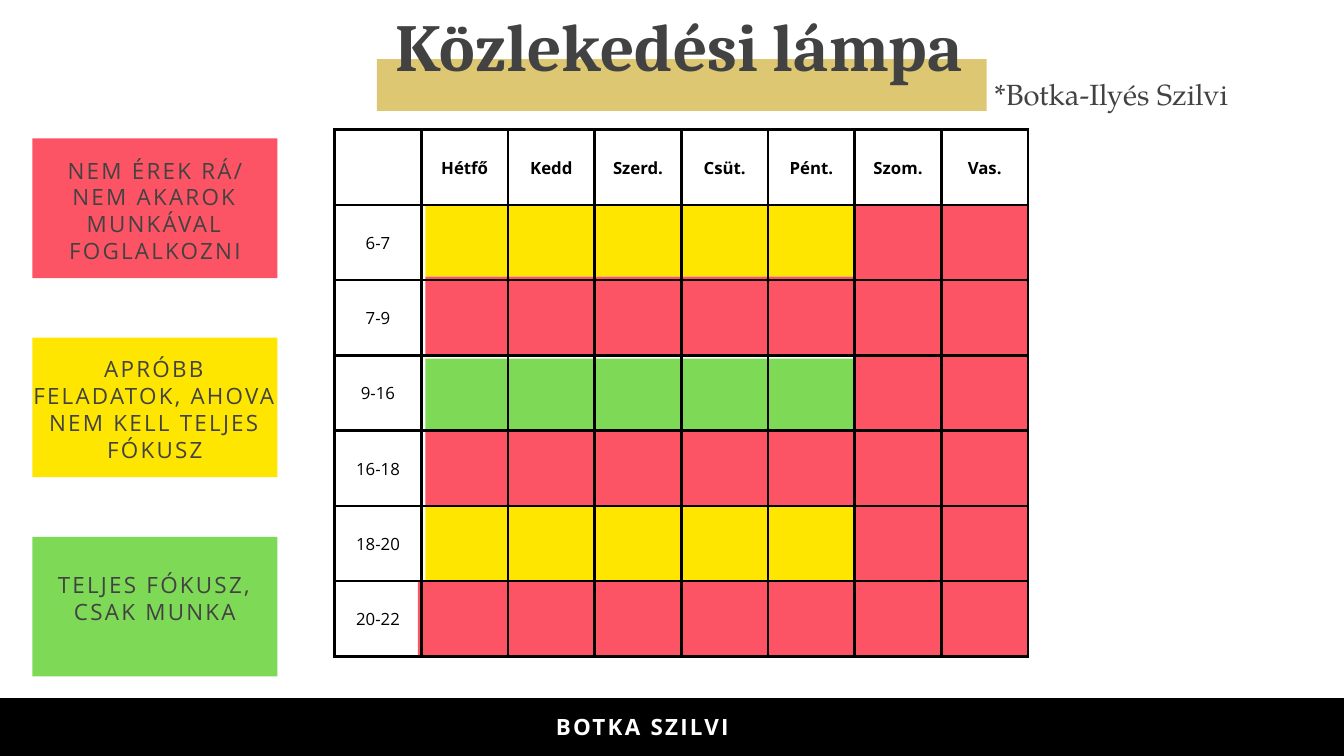
"""Build a weekly traffic-light planner slide."""
from lxml import etree
from pptx import Presentation
from pptx.dml.color import RGBColor
from pptx.enum.shapes import MSO_SHAPE
from pptx.enum.text import MSO_ANCHOR, PP_ALIGN
from pptx.oxml.ns import qn
from pptx.util import Cm, Pt

RECT = MSO_SHAPE.RECTANGLE
TOP, MIDDLE = MSO_ANCHOR.TOP, MSO_ANCHOR.MIDDLE
LEFT, CENTER = PP_ALIGN.LEFT, PP_ALIGN.CENTER

RED, YELLOW, GREEN = "FC5464", "FFE600", "7ED957"
GOLD, GRAY, BLACK, WHITE = "DEC772", "424242", "000000", "FFFFFF"
DAYS = ["Hétfő", "Kedd", "Szerd.", "Csüt.", "Pént.", "Szom.", "Vas."]
HOURS = ["6-7", "7-9", "9-16", "16-18", "18-20", "20-22"]
LEGEND = [
    (RED, "NEM ÉREK RÁ/\nNEM AKAROK MUNKÁVAL FOGLALKOZNI", 0.69),
    (YELLOW, "APRÓBB FELADATOK, AHOVA NEM KELL TELJES FÓKUSZ", 0.67),
    (GREEN, "TELJES FÓKUSZ, CSAK MUNKA", 1.3),
]
WEEKDAY_BANDS = [
    (YELLOW, 7.77, 2.69),
    (RED, 10.46, 2.93),
    (GREEN, 13.56, 2.7),
    (RED, 16.26, 2.84),
    (YELLOW, 19.1, 2.87),
]


def rgb(value):
    return RGBColor.from_string(value)


class Deck:
    def __init__(self, slide):
        self.s = slide
        self.font = "Open Sans"

    def fill_text(self, tf, text, size, color=GRAY, font=None, bold=False,
                  align=CENTER, leading=28.8, spacing=0, top=0):
        tf.text = text
        tf.word_wrap = True
        tf.vertical_anchor = TOP
        tf.margin_left = tf.margin_right = tf.margin_bottom = 0
        tf.margin_top = Cm(top)
        for p in tf.paragraphs:
            self.style(p, size, color, font, bold, align, leading)
            if spacing:
                props = p._p.get_or_add_pPr().get_or_add_defRPr()
                props.set("spc", str(round(spacing * 100)))

    def style(self, p, size, color, font, bold, align, leading):
        p.alignment = align
        p.line_spacing = Pt(leading)
        p.space_before = Pt(0)
        p.font.size = Pt(size)
        p.font.name = font or self.font
        p.font.bold = bold
        p.font.color.rgb = rgb(color)

    def title(self, x, y, w, h, text, **style):
        sp = self.s.shapes.title
        sp.left, sp.top, sp.width, sp.height = Cm(x), Cm(y), Cm(w), Cm(h)
        self.fill_text(sp.text_frame, text, **style)
        sp.element.getparent().append(sp.element)

    def text(self, x, y, w, h, text, **style):
        sp = self.s.shapes.add_textbox(Cm(x), Cm(y), Cm(w), Cm(h))
        self.fill_text(sp.text_frame, text, **style)

    def box(self, x, y, w, h, color):
        sp = self.s.shapes.add_shape(RECT, Cm(x), Cm(y), Cm(w), Cm(h))
        sp.shadow.inherit = False
        sp.fill.solid()
        sp.fill.fore_color.rgb = rgb(color)
        sp.line.fill.background()
        return sp

    def border(self, cell):
        props = cell._tc.get_or_add_tcPr()
        for side in ("lnL", "lnR", "lnT", "lnB"):
            ln = etree.SubElement(props, qn("a:" + side), w=str(Pt(3)))
            fill = etree.SubElement(ln, qn("a:solidFill"))
            etree.SubElement(fill, qn("a:srgbClr"), val=BLACK)

    def table(self, x, y, w, h, rows):
        frame = self.s.shapes.add_table(len(rows), len(rows[0]),
                                        Cm(x), Cm(y), Cm(w), Cm(h))
        table = frame.table
        table.first_row = table.horz_banding = False
        for i, row in enumerate(rows):
            for j, text in enumerate(row):
                cell = table.cell(i, j)
                self.border(cell)
                cell.fill.background()
                cell.vertical_anchor = MIDDLE
                cell.margin_left = cell.margin_right = Cm(0.53)
                cell.margin_top = cell.margin_bottom = Cm(0.53)
                cell.text = text
                self.style(cell.text_frame.paragraphs[0], 18, BLACK, None,
                           i == 0, CENTER, 25.2)


def main():
    prs = Presentation()
    prs.slide_width, prs.slide_height = Cm(50.8), Cm(28.575)
    deck = Deck(prs.slides.add_slide(prs.slide_layouts[5]))

    deck.box(0, 26.39, 50.8, 2.19, BLACK)
    deck.box(14.25, 2.24, 23.04, 1.95, GOLD)
    deck.text(17.04, 26.95, 14.48, 0.99, "BOTKA SZILVI", size=24,
              color=WHITE, bold=True, spacing=2.4)
    deck.title(0.71, 0.66, 49.91, 2.67, "Közlekedési lámpa", size=72,
               font="Cambria", bold=True, leading=72)
    deck.text(37.59, 2.67, 10.8, 1.5, "*Botka-Ilyés Szilvi", size=31.3,
              font="TeX Gyre Pagella", align=LEFT, leading=43.8)

    for i, (color, text, top) in enumerate(LEGEND):
        sp = deck.box(1.22, 5.23 + i * 7.53, 9.27, 5.28, color)
        deck.fill_text(sp.text_frame, text, size=24, spacing=2.4, top=top)

    deck.box(15.8, 21.97, 23.09, 2.86, RED)
    deck.box(32.26, 7.77, 6.63, 14.2, RED)
    for color, y, h in WEEKDAY_BANDS:
        deck.box(16.08, y, 16.18, h, color)

    rows = [[""] + DAYS] + [[hour] + [""] * len(DAYS) for hour in HOURS]
    deck.table(12.65, 4.9, 26.21, 19.91, rows)
    prs.save("out.pptx")


if __name__ == "__main__":
    main()
